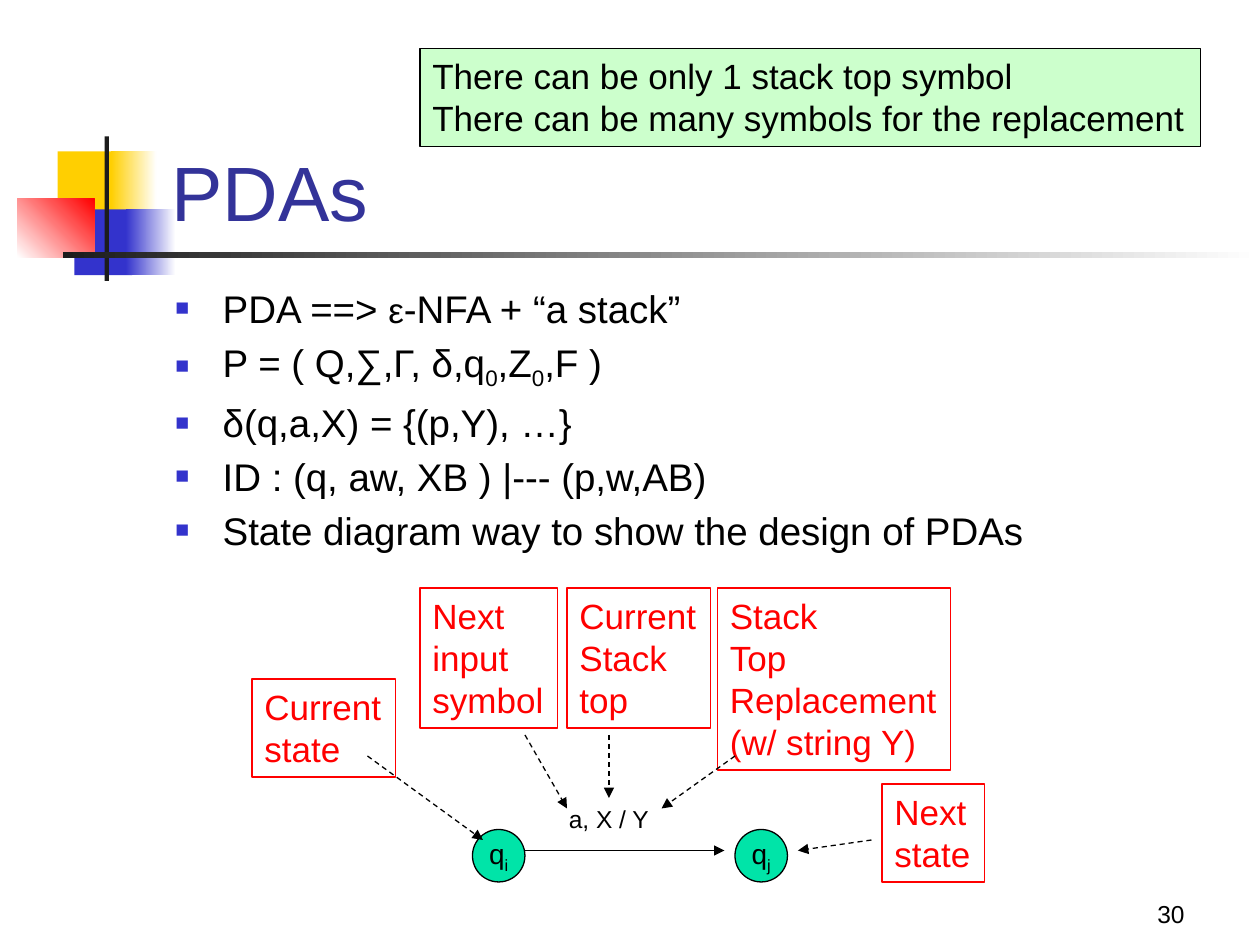
from typing import NamedTuple

from lxml.etree import SubElement
from pptx import Presentation
from pptx.dml.color import RGBColor
from pptx.enum.dml import MSO_LINE
from pptx.enum.shapes import MSO_CONNECTOR, MSO_SHAPE
from pptx.enum.text import MSO_ANCHOR, MSO_AUTO_SIZE, PP_ALIGN
from pptx.oxml.ns import qn
from pptx.util import Pt

FONT = "Arial"
BLACK, RED, GREEN, TEAL = "000000", "FF0000", "CCFFCC", "00E4A8"
YELLOW, BLUE, DARK, WHITE, NAVY = "FFCF01", "3333CC", "1C1C1C", "FFFFFF", "333399"


class Box(NamedTuple):
    x: float
    y: float
    w: float
    h: float


class Run(NamedTuple):
    text: str
    size: float
    color: str = BLACK
    sub: bool = False


class Bar(NamedTuple):
    box: Box
    start: str
    end: str = ""
    angle: float = 0


class Label(NamedTuple):
    box: Box
    lines: list[str]
    size: float = 20
    color: str = RED
    outline: str = RED
    fill: str = ""


class Arrow(NamedTuple):
    x1: float
    y1: float
    x2: float
    y2: float
    dashed: bool = True


class State(NamedTuple):
    x: float
    index: str


BARS = [
    Bar(Box(33, 86.5, 34.5, 37.5), YELLOW),
    Bar(Box(63.5, 86.5, 26, 37.5), YELLOW, WHITE),
    Bar(Box(42.5, 119.7, 33, 37.5), BLUE),
    Bar(Box(72, 119.7, 28.5, 37.5), BLUE, WHITE),
    Bar(Box(10, 113.7, 44, 33.5), WHITE, RED, 45),
    Bar(Box(59.8, 78, 2.5, 82.5), DARK),
    Bar(Box(36, 144, 684, 3.6), DARK, WHITE),
]
BULLETS = [
    [Run("PDA ==> ", 22), Run("ε", 20), Run("-NFA + “a stack”", 22)],
    [Run("P = ( Q,∑,Γ, δ,q", 22), Run("0", 22, sub=True), Run(",Z", 22),
     Run("0", 22, sub=True), Run(",F )", 22)],
    [Run("δ(q,a,X) = {(p,Y), …}", 22)],
    [Run("ID : (q, aw, XB ) |--- (p,w,AB)", 22)],
    [Run("State diagram way to show the design of PDAs", 22)],
]
STATES = [State(270, "i"), State(420, "j")]
LABELS = [
    Label(Box(318, 456, 64, 24), ["a, X / Y"], 14, BLACK, ""),
    Label(Box(240, 336, 78.5, 80), ["Next \ninput \nsymbol"]),
    Label(Box(144, 388, 82, 56), ["Current\nstate"]),
    Label(Box(324, 336, 82, 80), ["Current", "Stack\ntop"]),
    Label(Box(410, 336, 133, 104), ["Stack", "Top", "Replacement", "(w/ string Y)"]),
    Label(Box(504, 448, 58.5, 56), ["Next\nstate"]),
    Label(Box(240, 27.7, 446, 56),
          ["There can be only 1 stack top symbol",
           "There can be many symbols for the replacement"], 20, BLACK, BLACK, GREEN),
]
ARROWS = [
    Arrow(300, 486, 414, 486, False),
    Arrow(210, 432, 276, 480),
    Arrow(300, 420, 324, 462),
    Arrow(348, 420, 348, 456),
    Arrow(420, 432, 378, 462),
    Arrow(498, 480, 456, 486),
]


def rgb(value: str) -> RGBColor:
    """Turn a hex string into a colour."""
    return RGBColor.from_string(value)


def points(values) -> list:
    """Turn numbers into lengths in points."""
    return [Pt(v) for v in values]


def add_runs(p, runs: list[Run]) -> None:
    """Append runs to a paragraph, breaking lines at newlines."""
    for run in runs:
        for i, part in enumerate(run.text.split("\n")):
            if i:
                p.add_line_break()
            r = p.add_run()
            r.text = part
            r.font.name, r.font.size = FONT, Pt(run.size)
            r.font.color.rgb = rgb(run.color)
            if run.sub:
                r._r.get_or_add_rPr().set("baseline", "-25000")


def write(tf, paragraphs: list[list[Run]], align=PP_ALIGN.LEFT) -> None:
    """Fill a text frame with paragraphs."""
    for i, runs in enumerate(paragraphs):
        p = tf.add_paragraph() if i else tf.paragraphs[0]
        p.alignment = align
        add_runs(p, runs)


def add_text(s, box: Box, paragraphs: list[list[Run]], anchor=MSO_ANCHOR.TOP,
             align=PP_ALIGN.LEFT):
    """Add a wrapping text box and return its frame."""
    tf = s.shapes.add_textbox(*points(box)).text_frame
    tf.word_wrap, tf.vertical_anchor = True, anchor
    write(tf, paragraphs, align)
    return tf


def add_bullet(p) -> None:
    """Give a paragraph a hanging square bullet."""
    p.space_before = Pt(4.4)
    pPr = p._p.get_or_add_pPr()
    pPr.set("marL", str(Pt(27)))
    pPr.set("indent", str(-Pt(27)))
    SubElement(SubElement(pPr, qn("a:buClr")), qn("a:srgbClr")).set("val", BLUE)
    SubElement(pPr, qn("a:buSzPct")).set("val", "60000")
    SubElement(pPr, qn("a:buFont")).set("typeface", FONT)
    SubElement(pPr, qn("a:buChar")).set("char", "■")


def add_bar(s, bar: Bar) -> None:
    """Draw a plain or gradient rectangle."""
    sp = s.shapes.add_shape(MSO_SHAPE.RECTANGLE, *points(bar.box))
    sp.shadow.inherit = False
    sp.line.fill.background()
    if not bar.end:
        sp.fill.solid()
        sp.fill.fore_color.rgb = rgb(bar.start)
        return
    sp.fill.gradient()
    sp.fill.gradient_angle = bar.angle
    for i, (stop, color) in enumerate(zip(sp.fill.gradient_stops, (bar.start, bar.end))):
        stop.position, stop.color.rgb = i, rgb(color)


def add_state(s, state: State) -> None:
    """Draw an automaton state with its subscripted name."""
    sp = s.shapes.add_shape(MSO_SHAPE.OVAL, *points((state.x, 474, 30, 30)))
    sp.shadow.inherit = False
    sp.fill.solid()
    sp.fill.fore_color.rgb = rgb(TEAL)
    sp.line.color.rgb, sp.line.width = rgb(BLACK), Pt(0.75)
    tf = sp.text_frame
    tf.word_wrap, tf.vertical_anchor = False, MSO_ANCHOR.MIDDLE
    write(tf, [[Run("q", 16), Run(state.index, 16, sub=True)]], PP_ALIGN.CENTER)


def add_label(s, label: Label) -> None:
    """Draw a label that fits its text."""
    sp = s.shapes.add_textbox(*points(label.box))
    if label.fill:
        sp.fill.solid()
        sp.fill.fore_color.rgb = rgb(label.fill)
    if label.outline:
        sp.line.color.rgb, sp.line.width = rgb(label.outline), Pt(0.75)
    tf = sp.text_frame
    tf.word_wrap, tf.auto_size = False, MSO_AUTO_SIZE.SHAPE_TO_FIT_TEXT
    write(tf, [[Run(line, label.size, label.color)] for line in label.lines])


def add_arrow(s, arrow: Arrow) -> None:
    """Draw a straight arrow."""
    sp = s.shapes.add_connector(MSO_CONNECTOR.STRAIGHT, *points(arrow[:4]))
    sp.line.color.rgb, sp.line.width = rgb(BLACK), Pt(0.75)
    if arrow.dashed:
        sp.line.dash_style = MSO_LINE.DASH
    SubElement(sp.line._get_or_add_ln(), qn("a:tailEnd")).set("type", "triangle")
    SubElement(sp._element.spPr, qn("a:effectLst"))


def main() -> None:
    """Build the slide and save it."""
    prs = Presentation()
    prs.slide_width, prs.slide_height = Pt(720), Pt(540)
    s = prs.slides.add_slide(prs.slide_layouts[6])
    for bar in BARS:
        add_bar(s, bar)
    add_text(s, Box(534, 498, 150, 36), [[Run("30", 14)]], MSO_ANCHOR.BOTTOM, PP_ALIGN.RIGHT)
    add_text(s, Box(91, 49, 613, 90), [[Run("PDAs", 44, NAVY)]], MSO_ANCHOR.BOTTOM)
    for p in add_text(s, Box(93.2, 159.3, 612, 324), BULLETS).paragraphs:
        add_bullet(p)
    for state in STATES:
        add_state(s, state)
    for label in LABELS:
        add_label(s, label)
    for arrow in ARROWS:
        add_arrow(s, arrow)
    prs.save("out.pptx")


if __name__ == "__main__":
    main()
